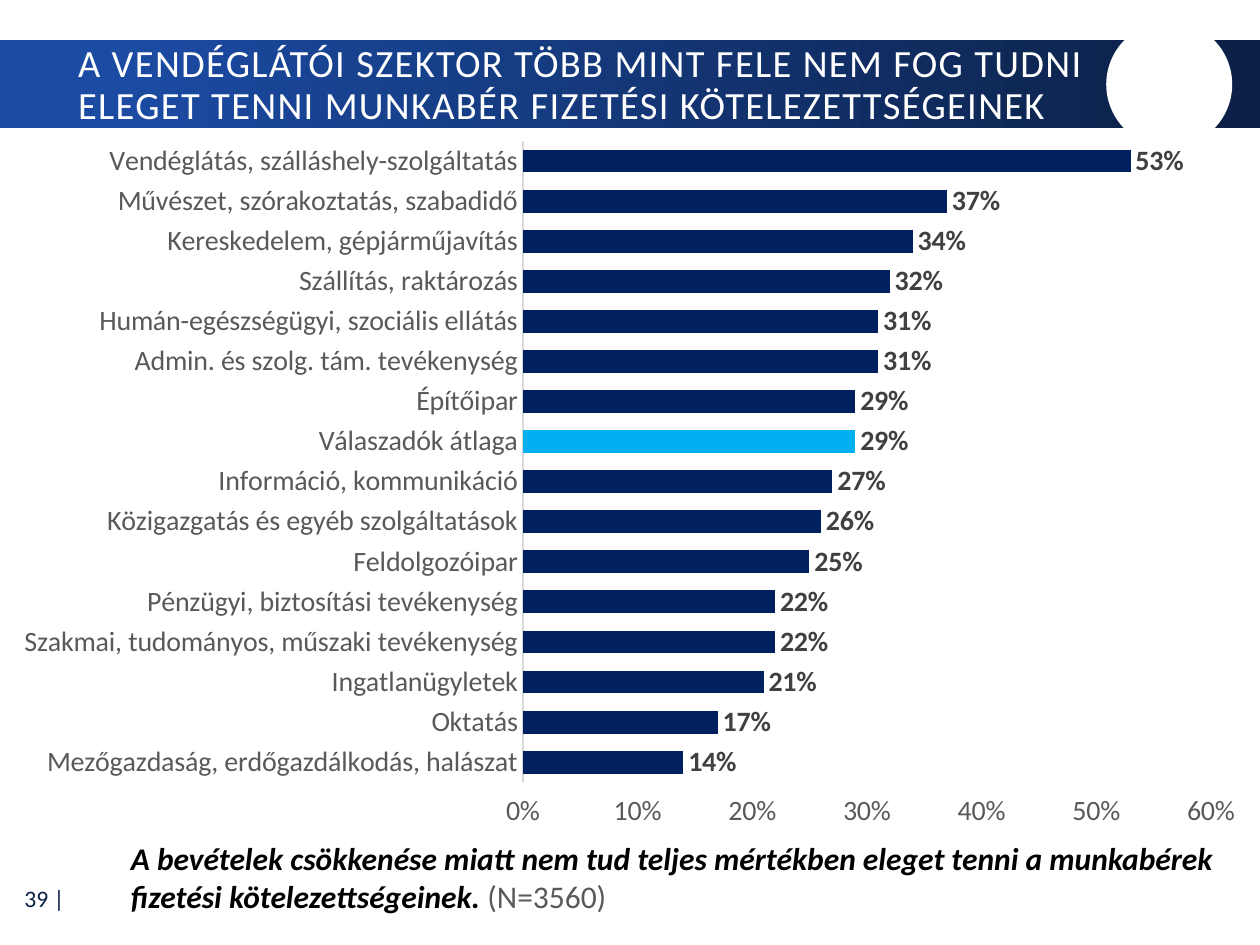
from lxml import etree
from pptx import Presentation
from pptx.chart.data import CategoryChartData
from pptx.dml.color import RGBColor
from pptx.enum.chart import XL_CHART_TYPE, XL_LABEL_POSITION, XL_TICK_LABEL_POSITION, XL_TICK_MARK
from pptx.enum.shapes import MSO_SHAPE
from pptx.enum.text import MSO_ANCHOR, PP_ALIGN
from pptx.oxml import parse_xml
from pptx.oxml.ns import nsdecls, qn
from pptx.util import Inches, Pt

# Content
TITLE = ("A VENDÉGLÁTÓI SZEKTOR TÖBB MINT FELE NEM FOG TUDNI "
         "ELEGET TENNI MUNKABÉR FIZETÉSI KÖTELEZETTSÉGEINEK")
QUESTION = ("A bevételek csökkenése miatt nem tud teljes mértékben eleget tenni "
            "a munkabérek fizetési kötelezettségeinek. ")
SAMPLE = "(N=3560)"
PAGE = "39 |"
AVERAGE = "Válaszadók átlaga"
SECTORS = {
    "Vendéglátás, szálláshely-szolgáltatás": 0.53,
    "Művészet, szórakoztatás, szabadidő": 0.37,
    "Kereskedelem, gépjárműjavítás": 0.34,
    "Szállítás, raktározás": 0.32,
    "Humán-egészségügyi, szociális ellátás": 0.31,
    "Admin. és szolg. tám. tevékenység": 0.31,
    "Építőipar": 0.29,
    AVERAGE: 0.29,
    "Információ, kommunikáció": 0.27,
    "Közigazgatás és egyéb szolgáltatások": 0.26,
    "Feldolgozóipar": 0.25,
    "Pénzügyi, biztosítási tevékenység": 0.22,
    "Szakmai, tudományos, műszaki tevékenység": 0.22,
    "Ingatlanügyletek": 0.21,
    "Oktatás": 0.17,
    "Mezőgazdaság, erdőgazdálkodás, halászat": 0.14,
}

# Chart size and the bars' area within it, in inches
CHART_WIDTH, CHART_HEIGHT = 10, 5.68
PLOT_LEFT, PLOT_TOP, PLOT_WIDTH, PLOT_HEIGHT = 4.15, 0.11, 5.46, 5.09

FONT = "Calibri"
WHITE = RGBColor(0xFF, 0xFF, 0xFF)
BLACK = RGBColor(0, 0, 0)
BLUE = RGBColor(0x1B, 0x4B, 0xA3)
NAVY = RGBColor(0x0C, 0x21, 0x48)
BAR = RGBColor(0x00, 0x20, 0x60)
HIGHLIGHT = RGBColor(0x00, 0xB0, 0xF0)
GREY = RGBColor(0x59, 0x59, 0x59)
DARK_GREY = RGBColor(0x40, 0x40, 0x40)
LIGHT_GREY = RGBColor(0xD9, 0xD9, 0xD9)


def box(left, top, width, height):
    return [Inches(n) for n in (left, top, width, height)]


def style(font, size, color, bold=False, italic=False):
    font.name, font.size, font.bold, font.italic = FONT, Pt(size), bold, italic
    font.color.rgb = color


def add_run(paragraph, text, *look):
    run = paragraph.add_run()
    run.text = text
    style(run.font, *look)
    return run


def add_plain_shape(kind, *place):
    shape = slide.shapes.add_shape(kind, *box(*place))
    shape.shadow.inherit = False
    shape.line.fill.background()
    return shape


def add_text_box(*place):
    frame = slide.shapes.add_textbox(*box(*place)).text_frame
    frame.word_wrap = True
    return frame


prs = Presentation()
prs.slide_width, prs.slide_height = Inches(10), Inches(7.5)
slide = prs.slides.add_slide(prs.slide_layouts[5])

# Page number
page = add_text_box(0.01, 6.94, 0.6, 0.37)
page.vertical_anchor = MSO_ANCHOR.MIDDLE
page.paragraphs[0].alignment = PP_ALIGN.RIGHT
add_run(page.paragraphs[0], PAGE, 13.5, NAVY)

# Header band with its round cut-out
band = add_plain_shape(MSO_SHAPE.RECTANGLE, 0, 0.32, 10, 0.7)
band.fill.gradient()
band.fill.gradient_angle = 0
for stop, color, position in zip(band.fill.gradient_stops, (BLUE, NAVY), (0.09, 0.95)):
    stop.color.rgb, stop.position = color, position
cutout = add_plain_shape(MSO_SHAPE.OVAL, 8.78, 0.17, 1, 1)
cutout.fill.solid()
cutout.fill.fore_color.rgb = WHITE

# Title, brought in front of the band
title = slide.shapes.title
title.left, title.top, title.width, title.height = box(0.52, 0.35, 8.32, 0.67)
cutout._element.addnext(title._element)
title.text_frame.word_wrap = True
title.text_frame.vertical_anchor = MSO_ANCHOR.MIDDLE
heading = title.text_frame.paragraphs[0]
heading.alignment, heading.line_spacing = PP_ALIGN.LEFT, 0.9
title_run = add_run(heading, TITLE, 22, WHITE)
title_run.font._element.set("spc", "80")

# Bar chart
data = CategoryChartData(number_format="0%")
data.categories = list(SECTORS)
data.add_series("Series 1", list(SECTORS.values()))
chart = slide.shapes.add_chart(
    XL_CHART_TYPE.BAR_CLUSTERED, *box(0, 1.01, CHART_WIDTH, CHART_HEIGHT), data).chart
chart.has_legend = chart.has_title = False
style(chart.font, 10, BLACK)

# Axes: first sector on top, percentages below the bars
sectors, shares = chart.category_axis, chart.value_axis
for axis in (sectors, shares):
    axis.major_tick_mark = axis.minor_tick_mark = XL_TICK_MARK.NONE
    axis.has_major_gridlines = False
    style(axis.tick_labels.font, 16, GREY)
sectors.reverse_order = True
sectors.format.line.color.rgb = LIGHT_GREY
sectors.format.line.width = Pt(0.75)
shares.tick_label_position = XL_TICK_LABEL_POSITION.HIGH
shares.minimum_scale, shares.maximum_scale, shares.major_unit = 0, 0.6, 0.1
shares.tick_labels.number_format = "0%"
shares.tick_labels.number_format_is_linked = False
shares.format.line.fill.background()

# Bars and their labels
plot = chart.plots[0]
plot.gap_width, plot.vary_by_categories = 75, False
bars = plot.series[0]
average = bars.points[list(SECTORS).index(AVERAGE)]
for part, color in ((bars, BAR), (average, HIGHLIGHT)):
    part.format.fill.solid()
    part.format.fill.fore_color.rgb = color
labels = bars.data_labels
labels.show_value = True
labels.number_format, labels.number_format_is_linked = "0%", False
labels.position = XL_LABEL_POSITION.OUTSIDE_END
style(labels.font, 16, DARK_GREY, True)

# Fixed plot area, in shares of the chart
area = chart._chartSpace.find(".//" + qn("c:plotArea"))
for old in area.findall(qn("c:layout")):
    area.remove(old)
layout = parse_xml(f"<c:layout {nsdecls('c')}><c:manualLayout/></c:layout>")
settings = {
    "layoutTarget": "inner", "xMode": "edge", "yMode": "edge",
    "x": PLOT_LEFT / CHART_WIDTH, "y": PLOT_TOP / CHART_HEIGHT,
    "w": PLOT_WIDTH / CHART_WIDTH, "h": PLOT_HEIGHT / CHART_HEIGHT,
}
for tag, value in settings.items():
    etree.SubElement(layout[0], qn(f"c:{tag}")).set("val", str(value))
area.insert(0, layout)

# Survey question
question = add_text_box(0.94, 6.61, 9.55, 0.71).paragraphs[0]
add_run(question, QUESTION, 18, BLACK, True, True)
add_run(question, SAMPLE, 18, GREY)

prs.save("out.pptx")
